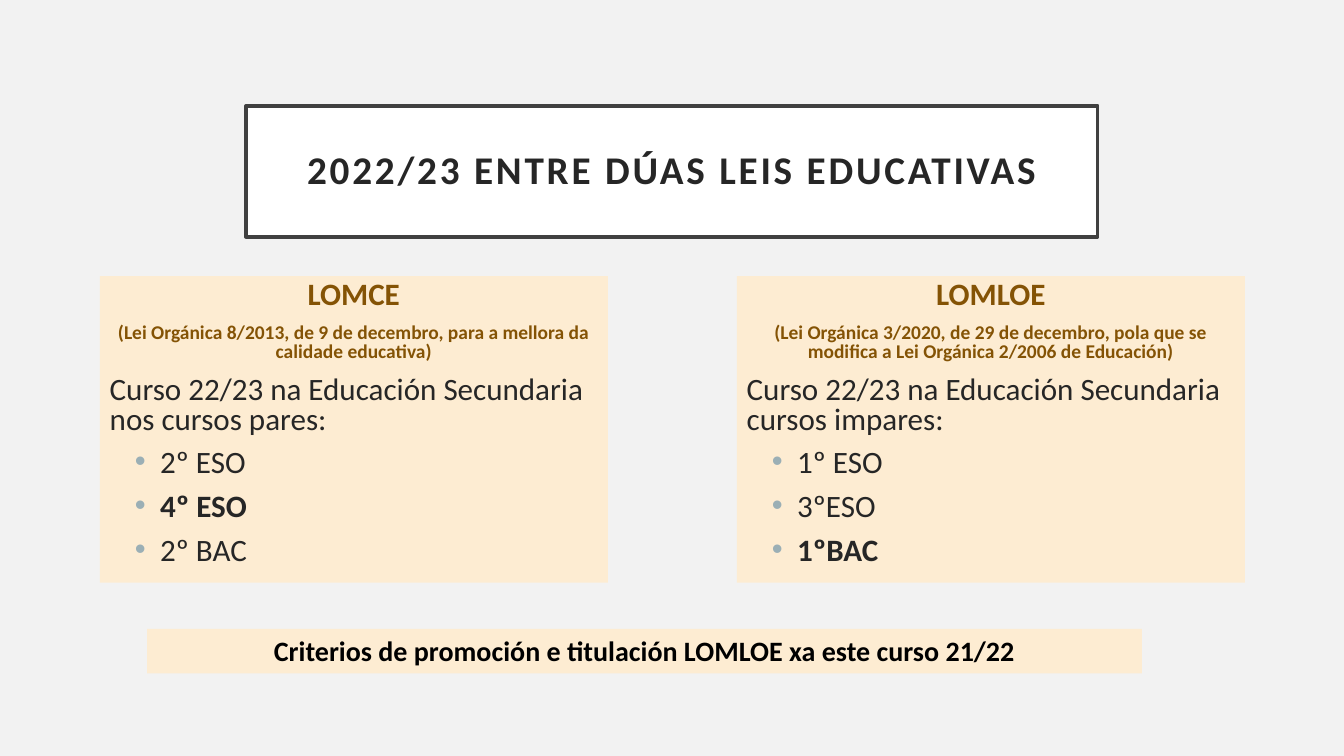
from lxml import etree
from pptx import Presentation
from pptx.dml.color import RGBColor
from pptx.enum.shapes import MSO_SHAPE
from pptx.enum.text import MSO_ANCHOR, PP_ALIGN
from pptx.oxml.ns import qn
from pptx.util import Pt

RECTANGLE = MSO_SHAPE.RECTANGLE
TOP, MIDDLE = MSO_ANCHOR.TOP, MSO_ANCHOR.MIDDLE
LEFT, CENTER = PP_ALIGN.LEFT, PP_ALIGN.CENTER

FONT = "Calibri"
COLORS = {
    "background": "F2F2F2",
    "white": "FFFFFF",
    "frame": "404040",
    "panel": "FDECD2",
    "heading": "845305",
    "text": "262626",
    "bullet": "9BAFB5",
    "black": "000000",
}
LAWS = [
    ("LOMCE",
     "(Lei Orgánica 8/2013, de 9 de decembro, para a mellora da calidade educativa)",
     "Curso 22/23 na Educación Secundaria nos cursos pares:",
     [("2º ESO", False), ("4º ESO", True), ("2º BAC", False)]),
    ("LOMLOE",
     "(Lei Orgánica 3/2020, de 29 de decembro, pola que se modifica a "
     "Lei Orgánica 2/2006 de Educación)",
     "Curso 22/23 na Educación Secundaria cursos impares:",
     [("1º ESO", False), ("3ºESO", False), ("1ºBAC", True)]),
]


def rgb(name):
    return RGBColor.from_string(COLORS[name])


def add_box(slide, box, fill, line=None, anchor=TOP, inset=None):
    """Add a filled rectangle and return its empty text frame."""
    shape = slide.shapes.add_shape(RECTANGLE, *(Pt(value) for value in box))
    shape.shadow.inherit = False
    shape.fill.solid()
    shape.fill.fore_color.rgb = rgb(fill)
    if line:
        shape.line.color.rgb = rgb(line)
        shape.line.width = Pt(2.5)
    else:
        shape.line.fill.background()
    frame = shape.text_frame
    frame.word_wrap = True
    frame.vertical_anchor = anchor
    if inset is not None:
        frame.margin_left = frame.margin_right = Pt(inset)
        frame.margin_top = frame.margin_bottom = Pt(inset)
    return frame


def add_bullet(paragraph):
    properties = paragraph._p.get_or_add_pPr()
    properties.set("marL", str(Pt(36)))
    properties.set("indent", str(Pt(-18)))
    color = etree.SubElement(properties, qn("a:buClr"))
    etree.SubElement(color, qn("a:srgbClr"), val=COLORS["bullet"])
    etree.SubElement(properties, qn("a:buFont"), typeface="Arial")
    etree.SubElement(properties, qn("a:buChar"), char="•")


def write(frame, text, size=22.2, color="text", bold=False, align=LEFT,
          line_spacing=None, before=0, tracking=0, bullet=False):
    """Write one paragraph, using the frame's first one while it is empty."""
    paragraph = frame.paragraphs[0]
    if paragraph.runs:
        paragraph = frame.add_paragraph()
    paragraph.alignment = align
    paragraph.space_before = Pt(before)
    if line_spacing:
        paragraph.line_spacing = line_spacing
    if bullet:
        add_bullet(paragraph)
    run = paragraph.add_run()
    run.text = text
    run.font.name = FONT
    run.font.size = Pt(size)
    run.font.bold = bold
    run.font.color.rgb = rgb(color)
    if tracking:
        run._r.get_or_add_rPr().set("spc", str(tracking * 100))


def add_title(slide, box):
    frame = add_box(slide, box, "white", line="frame", anchor=MIDDLE, inset=14.4)
    write(frame, "2022/23 ENTRE DÚAS LEIS EDUCATIVAS", size=28, bold=True,
          align=CENTER, line_spacing=0.9, tracking=2)


def add_law_panel(slide, box, name, reference, intro, courses):
    frame = add_box(slide, box, "panel")
    spacing = {"line_spacing": 0.8, "before": 10}
    heading = {"color": "heading", "bold": True, "align": CENTER}
    write(frame, name, **heading, **spacing)
    write(frame, reference, size=13.9, **heading, **spacing)
    write(frame, intro, **spacing)
    for course, bold in courses:
        write(frame, course, bold=bold, bullet=True, **spacing)


def add_criteria_band(slide, box):
    frame = add_box(slide, box, "panel")
    write(frame, "Criterios de promoción e titulación LOMLOE xa este curso 21/22",
          size=20, color="black", bold=True, align=CENTER)


def main():
    presentation = Presentation()
    presentation.slide_width, presentation.slide_height = Pt(960), Pt(540)
    slide = presentation.slides.add_slide(presentation.slide_layouts[6])
    slide.background.fill.solid()
    slide.background.fill.fore_color.rgb = rgb("background")

    # Title
    add_title(slide, (175.7, 75.6, 608.4, 93.6))

    # One panel for each law
    for index, law in enumerate(LAWS):
        add_law_panel(slide, (71.3 + index * 455, 197.3, 362.9, 218.9), *law)

    # Closing statement
    add_criteria_band(slide, (105.1, 449.3, 710.6, 31.7))

    presentation.save("out.pptx")


if __name__ == "__main__":
    main()
